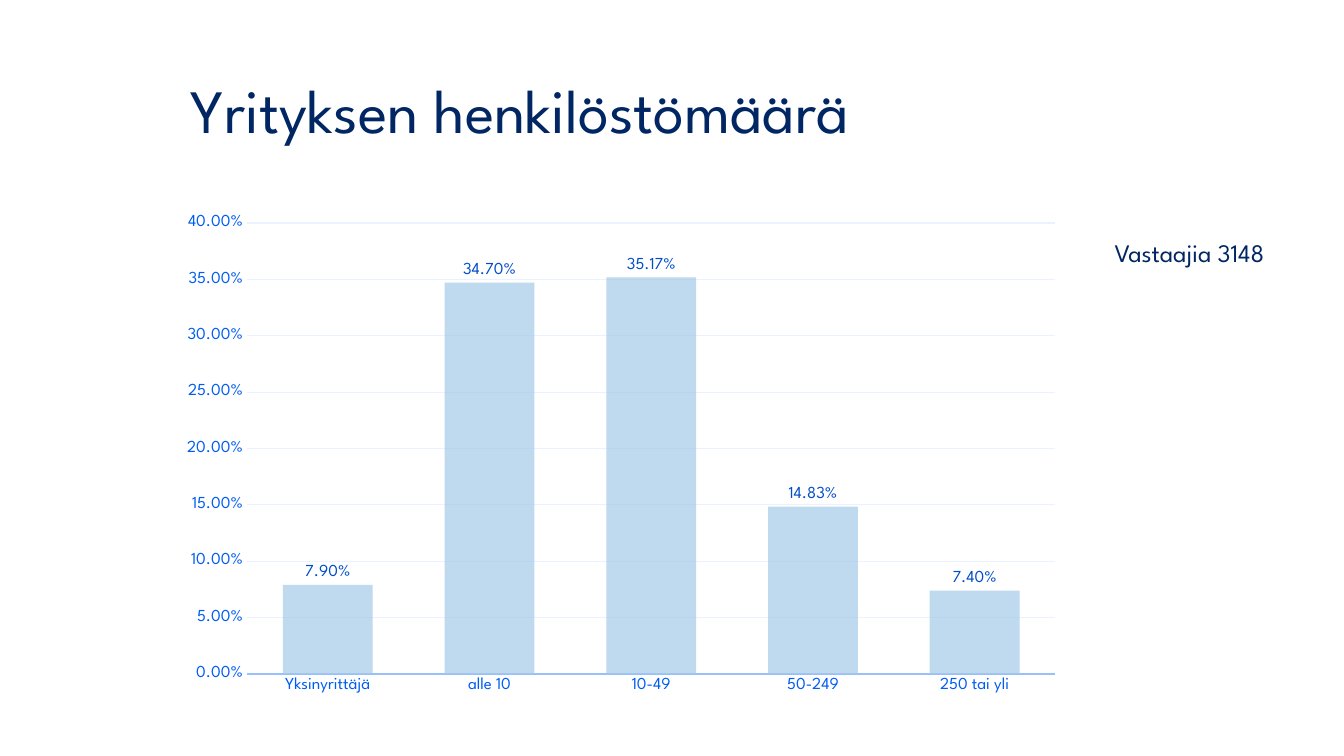
from lxml.etree import SubElement
from pptx import Presentation
from pptx.chart.data import CategoryChartData
from pptx.dml.color import RGBColor
from pptx.enum.chart import XL_CHART_TYPE, XL_LABEL_POSITION, XL_TICK_MARK
from pptx.enum.text import MSO_ANCHOR, MSO_AUTO_SIZE, PP_ALIGN
from pptx.oxml import parse_xml
from pptx.oxml.ns import nsdecls, qn
from pptx.util import Pt

FONT = "League Spartan"
COLORS = {
    "background": "FFFFFF",
    "text": "002663",
    "axis_text": "005DF3",
    "axis_line": "98C0FF",
    "grid": "EAF2FF",
    "bar": "A5C9E7",
    "value": "004DCA",
}
COMPANY_SIZES = {
    "Yksinyrittäjä": 0.079,
    "alle 10": 0.347,
    "10-49": 0.3517,
    "50-249": 0.1483,
    "250 tai yli": 0.074,
}
PLOT_LAYOUT = {"x": 0.09, "y": 0.04, "w": 0.89, "h": 0.9}


def set_attributes(target, values):
    for name, value in values.items():
        setattr(target, name, value)


def set_font(font, size, color):
    set_attributes(font, {"name": FONT, "size": Pt(size), "bold": False})
    font.color.rgb = RGBColor.from_string(COLORS[color])


def set_line(line, width, color):
    line.width = Pt(width)
    line.color.rgb = RGBColor.from_string(COLORS[color])


def place_title(slide, left, top, width, height):
    title = slide.shapes.title
    set_attributes(title, {"left": Pt(left), "top": Pt(top), "width": Pt(width), "height": Pt(height)})
    title.text_frame.text = "Yrityksen henkilöstömäärä"
    set_attributes(title.text_frame, {"vertical_anchor": MSO_ANCHOR.MIDDLE, "word_wrap": True})
    paragraph = title.text_frame.paragraphs[0]
    set_attributes(paragraph, {"alignment": PP_ALIGN.LEFT, "line_spacing": 0.9})
    set_font(paragraph.font, 44, "text")


def set_plot_layout(chart):
    plot_area = chart.element.find(f".//{qn('c:plotArea')}")
    for layout in plot_area.findall(qn("c:layout")):
        plot_area.remove(layout)
    sizes = "".join(f'<c:{name} val="{value}"/>' for name, value in PLOT_LAYOUT.items())
    plot_area.insert(0, parse_xml(
        f'<c:layout {nsdecls("c")}><c:manualLayout><c:layoutTarget val="inner"/>'
        f'<c:xMode val="edge"/><c:yMode val="edge"/>{sizes}</c:manualLayout></c:layout>'
    ))


def format_axes(chart):
    for axis in (chart.category_axis, chart.value_axis):
        set_attributes(axis, {"major_tick_mark": XL_TICK_MARK.NONE, "minor_tick_mark": XL_TICK_MARK.NONE})
        set_font(axis.tick_labels.font, 12, "axis_text")
    set_line(chart.category_axis.format.line, 1.25, "axis_line")
    value_axis = chart.value_axis
    set_attributes(value_axis, {"minimum_scale": 0, "maximum_scale": 0.4, "major_unit": 0.05})
    set_attributes(value_axis.tick_labels, {"number_format": "0.00%", "number_format_is_linked": False})
    value_axis.format.line.fill.background()
    set_line(value_axis.major_gridlines.format.line, 0.75, "grid")


def format_bars(plot):
    set_attributes(plot, {"gap_width": 80, "overlap": 25, "vary_by_categories": False})
    series = plot.series[0]
    fill = series.format.fill
    fill.solid()
    fill.fore_color.rgb = RGBColor.from_string(COLORS["bar"])
    bar_color = series.format.element.find(f".//{qn('a:srgbClr')}") if hasattr(series.format, "element") else \
        plot.series[0]._element.find(f".//{qn('a:srgbClr')}")
    SubElement(bar_color, qn("a:alpha"), val="70000")
    labels = series.data_labels
    set_attributes(labels, {
        "show_value": True,
        "position": XL_LABEL_POSITION.OUTSIDE_END,
        "number_format": "0.00%",
        "number_format_is_linked": False,
    })
    set_font(labels.font, 12, "value")


def place_chart(slide, left, top, width, height):
    data = CategoryChartData(number_format="0.00%")
    data.categories = list(COMPANY_SIZES)
    data.add_series("Series 1", list(COMPANY_SIZES.values()))
    chart = slide.shapes.add_chart(
        XL_CHART_TYPE.COLUMN_CLUSTERED, Pt(left), Pt(top), Pt(width), Pt(height), data
    ).chart
    set_attributes(chart, {"has_legend": False, "has_title": False})
    set_font(chart.font, 10, "text")
    set_plot_layout(chart)
    format_axes(chart)
    format_bars(chart.plots[0])


def place_respondents(slide, left, top, width, height):
    text_frame = slide.shapes.add_textbox(Pt(left), Pt(top), Pt(width), Pt(height)).text_frame
    text_frame.text = "Vastaajia 3148"
    set_attributes(text_frame, {"word_wrap": False, "auto_size": MSO_AUTO_SIZE.SHAPE_TO_FIT_TEXT})
    set_font(text_frame.paragraphs[0].font, 18, "text")


def main():
    presentation = Presentation()
    set_attributes(presentation, {"slide_width": Pt(960), "slide_height": Pt(540)})
    slide = presentation.slides.add_slide(presentation.slide_layouts[5])
    slide.background.fill.solid()
    slide.background.fill.fore_color.rgb = RGBColor.from_string(COLORS["background"])
    place_title(slide, 129, 29, 788, 104)
    place_chart(slide, 118, 145, 649, 358)
    place_respondents(slide, 789, 165.6, 142.6, 29)
    presentation.save("out.pptx")


if __name__ == "__main__":
    main()
